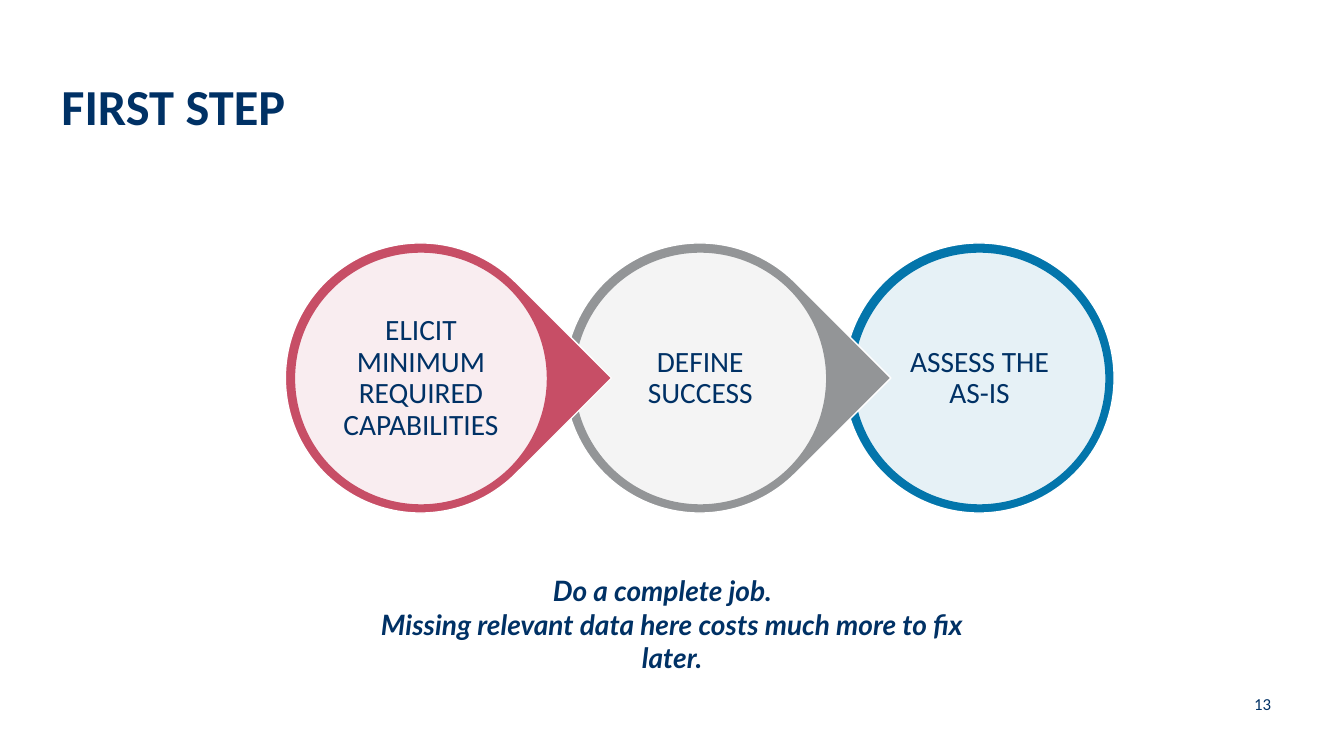
from dataclasses import dataclass

import pptx
import pptx.dml.color
import pptx.enum.shapes
import pptx.enum.text
import pptx.oxml.ns
import pptx.util
from lxml import etree

PX = 9144
SHAPE = pptx.enum.shapes.MSO_SHAPE
ALIGN = pptx.enum.text.PP_ALIGN
ANCHOR = pptx.enum.text.MSO_ANCHOR


@dataclass(frozen=True)
class Theme:
    """Colours, fonts and type sizes of the slide."""
    navy: str = "003165"
    white: str = "FFFFFF"
    red: str = "C74E66"
    grey: str = "939597"
    blue: str = "0375AB"
    font: str = "Calibri"
    note_font: str = "Lato"
    title_size: int = 36
    step_size: int = 21
    note_size: int = 20
    number_size: int = 12


THEME = Theme()


def px(n):
    """Turn px into EMU."""
    return pptx.util.Emu(n * PX)


def rgb(color):
    """Turn a hex string into a colour."""
    return pptx.dml.color.RGBColor.from_string(color)


def style(p, size, align=ALIGN.LEFT, font=THEME.font, bold=False, italic=False):
    """Set the alignment and font of a paragraph."""
    p.alignment = align
    p.font.name = font
    p.font.size = pptx.util.Pt(size)
    p.font.bold = bold
    p.font.italic = italic
    p.font.color.rgb = rgb(THEME.navy)


def add_text(s, x, y, w, h, text, anchor=ANCHOR.MIDDLE, inset=None):
    """Add a wrapping text box and return its text frame."""
    tf = s.shapes.add_textbox(px(x), px(y), px(w), px(h)).text_frame
    tf.word_wrap = True
    tf.vertical_anchor = anchor
    if inset is not None:
        tf.margin_left = tf.margin_right = px(inset)
        tf.margin_top = tf.margin_bottom = px(inset)
    tf.text = text
    return tf


def add_disc(s, kind, x, y, d, fill, line):
    """Add a round shape with a thin outline."""
    sp = s.shapes.add_shape(kind, px(x), px(y), px(d), px(d))
    sp.shadow.inherit = False
    sp.fill.solid()
    sp.fill.fore_color.rgb = rgb(fill)
    sp.line.color.rgb = rgb(line)
    sp.line.width = pptx.util.Pt(1)
    return sp


def set_alpha(sp, percent):
    """Set the opacity of a solid fill."""
    qn = pptx.oxml.ns.qn
    color = sp.fill._xPr.find(qn("a:solidFill")).find(qn("a:srgbClr"))
    etree.SubElement(color, qn("a:alpha"), val=str(percent * 1000))


def add_step(s, x, y, label, color, points_on):
    """Add a ringed step, with a tip to the right if another follows."""
    kind = SHAPE.TEAR if points_on else SHAPE.OVAL
    ring = add_disc(s, kind, x, y, 268, color, THEME.white)
    if points_on:
        ring.rotation = 45
    inner = add_disc(s, SHAPE.OVAL, x + 9, y + 9, 251, THEME.white, color)
    set_alpha(inner, 90)
    p = add_text(s, x + 45, y + 45, 179, 179, label, inset=3).paragraphs[0]
    p.line_spacing = 0.9
    style(p, THEME.step_size, ALIGN.CENTER)


def add_title(s, text):
    """Place and format the title placeholder."""
    sp = s.shapes.title
    sp.left, sp.top, sp.width, sp.height = px(51), px(14), px(1214), px(126)
    tf = sp.text_frame
    tf.text = text
    tf.auto_size = pptx.enum.text.MSO_AUTO_SIZE.NONE
    tf.vertical_anchor = ANCHOR.BOTTOM
    style(tf.paragraphs[0], THEME.title_size, bold=True)


def add_note(s, lead, rest):
    """Add the closing note, its second paragraph indented."""
    tf = add_text(s, 319, 564, 676, 77, lead, ANCHOR.TOP)
    p = tf.add_paragraph()
    p.text = rest
    p._p.get_or_add_pPr().set("marL", str(px(19)))
    for p in tf.paragraphs:
        style(p, THEME.note_size, ALIGN.CENTER, THEME.note_font, True, True)


def main():
    """Build the slide."""
    prs = pptx.Presentation()
    prs.slide_width, prs.slide_height = px(1333), px(750)
    s = prs.slides.add_slide(prs.slide_layouts[5])
    add_title(s, "FIRST STEP")
    steps = [
        ("ELICIT MINIMUM REQUIRED CAPABILITIES", THEME.red),
        ("DEFINE SUCCESS", THEME.grey),
        ("ASSESS THE AS-IS", THEME.blue),
    ]
    last = len(steps) - 1
    for i, (label, color) in reversed(list(enumerate(steps))):
        add_step(s, 283 + 277 * i, 241, label, color, i < last)
    add_note(s, "Do a complete job.",
             "Missing relevant data here costs much more to fix later.")
    number = add_text(s, 1234, 686, 49, 25, "13")
    style(number.paragraphs[0], THEME.number_size)
    prs.save("out.pptx")


if __name__ == "__main__":
    main()
